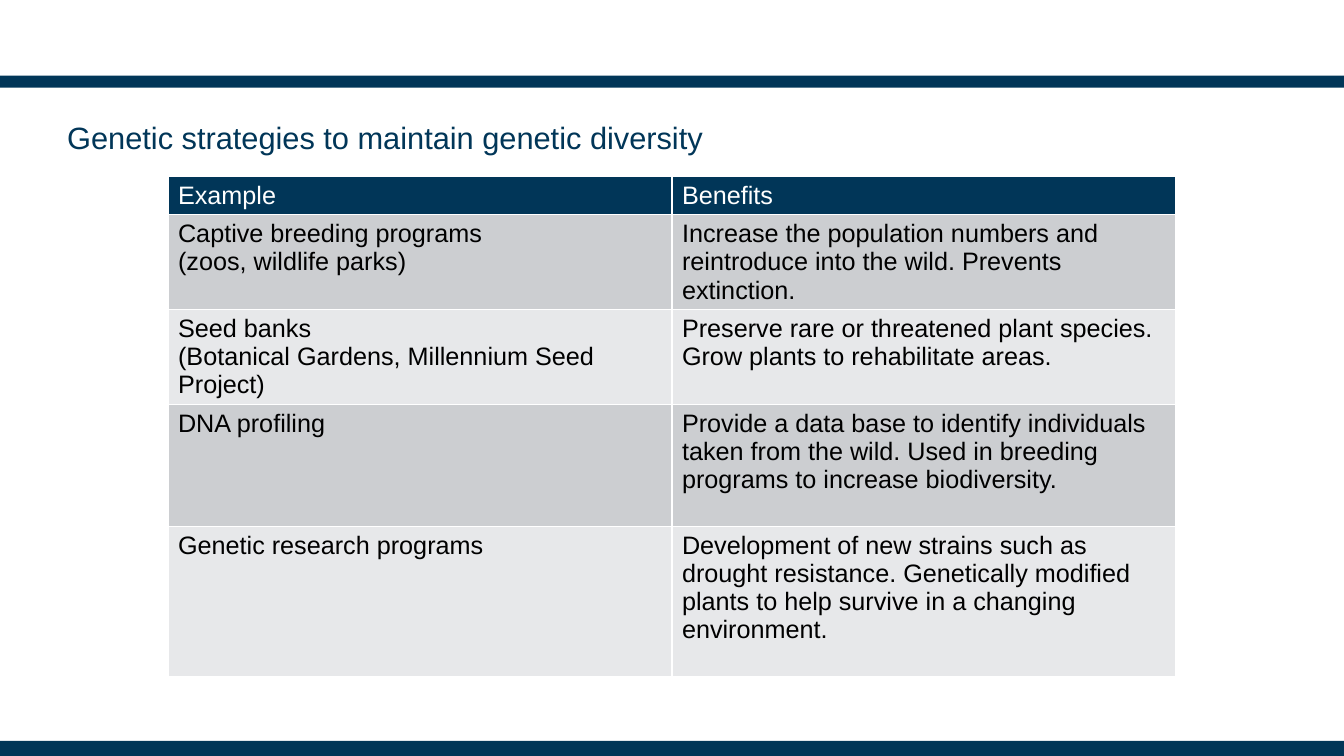
from pptx import Presentation
from pptx.dml.color import RGBColor
from pptx.enum.shapes import MSO_SHAPE
from pptx.enum.text import MSO_ANCHOR, MSO_AUTO_SIZE, PP_ALIGN
from pptx.util import Inches, Pt

TITLE = "Genetic strategies to maintain genetic diversity"
HEADER = (["Example"], ["Benefits"])
STRATEGIES = [
    (["Captive breeding programs", "(zoos, wildlife parks)"],
     ["Increase the population numbers and reintroduce into the wild. "
      "Prevents extinction."]),
    (["Seed banks", "(Botanical Gardens, Millennium Seed Project)"],
     ["Preserve rare or threatened plant species. "
      "Grow plants to rehabilitate areas."]),
    (["DNA profiling"],
     ["Provide a data base to identify individuals taken from the wild. "
      "Used in breeding programs to increase biodiversity."]),
    (["Genetic research programs"],
     ["Development of new strains such as drought resistance. "
      "Genetically modified plants to help survive in a changing environment."]),
]
ROW_HEIGHTS = [0.37, 0.94, 0.94, 1.21, 1.49]
WIDTH, HEIGHT = 13.33, 7.5
TABLE_WIDTH, TABLE_TOP = WIDTH * 0.75, 1.75
BARS = [(0.75, 0.12), (7.35, 0.15)]  # top, height
NAVY, WHITE, BLACK = "013658", "FFFFFF", "000000"
BANDS = ["CCCED1", "E7E8EA"]


def color(hex_string):
    return RGBColor.from_string(hex_string)


def write(para, text, size, hex_string):
    span = para.add_run()
    span.text = text
    span.font.name = "Arial"
    span.font.size = Pt(size)
    span.font.bold = False
    span.font.color.rgb = color(hex_string)


def add_bar(page, top, height):
    bar = page.shapes.add_shape(MSO_SHAPE.RECTANGLE, 0, Inches(top),
                                Inches(WIDTH), Inches(height))
    bar.shadow.inherit = False
    bar.fill.solid()
    bar.fill.fore_color.rgb = color(NAVY)
    bar.line.fill.background()


def set_title(page):
    title = page.shapes.title
    title.left, title.top = Inches(WIDTH * 0.05), Inches(1)
    title.width, title.height = Inches(WIDTH * 0.9), Inches(0.75)
    frame = title.text_frame
    frame.margin_left = frame.margin_right = 0
    frame.margin_top = frame.margin_bottom = 0
    frame.vertical_anchor = MSO_ANCHOR.MIDDLE
    frame.auto_size = MSO_AUTO_SIZE.NONE
    frame.word_wrap = True
    para = frame.paragraphs[0]
    para.alignment = PP_ALIGN.LEFT
    para.line_spacing = Pt(24)
    write(para, TITLE, 22, NAVY)


def add_strategy_table(page):
    rows = [HEADER] + STRATEGIES
    table = page.shapes.add_table(
        len(rows), len(HEADER), Inches((WIDTH - TABLE_WIDTH) / 2),
        Inches(TABLE_TOP), Inches(TABLE_WIDTH), Inches(sum(ROW_HEIGHTS))).table
    for row_index, row in enumerate(rows):
        table.rows[row_index].height = Inches(ROW_HEIGHTS[row_index])
        is_header = row_index == 0
        for column_index, lines in enumerate(row):
            cell = table.cell(row_index, column_index)
            cell.fill.solid()
            cell.fill.fore_color.rgb = color(
                NAVY if is_header else BANDS[(row_index - 1) % 2])
            frame = cell.text_frame
            for line_index, line in enumerate(lines):
                para = frame.add_paragraph() if line_index else frame.paragraphs[0]
                write(para, line, 18, WHITE if is_header else BLACK)


def main():
    deck = Presentation()
    deck.slide_width, deck.slide_height = Inches(WIDTH), Inches(HEIGHT)
    page = deck.slides.add_slide(deck.slide_layouts.get_by_name("Title Only"))
    for top, height in BARS:
        add_bar(page, top, height)
    set_title(page)
    add_strategy_table(page)
    deck.save("out.pptx")


if __name__ == "__main__":
    main()
